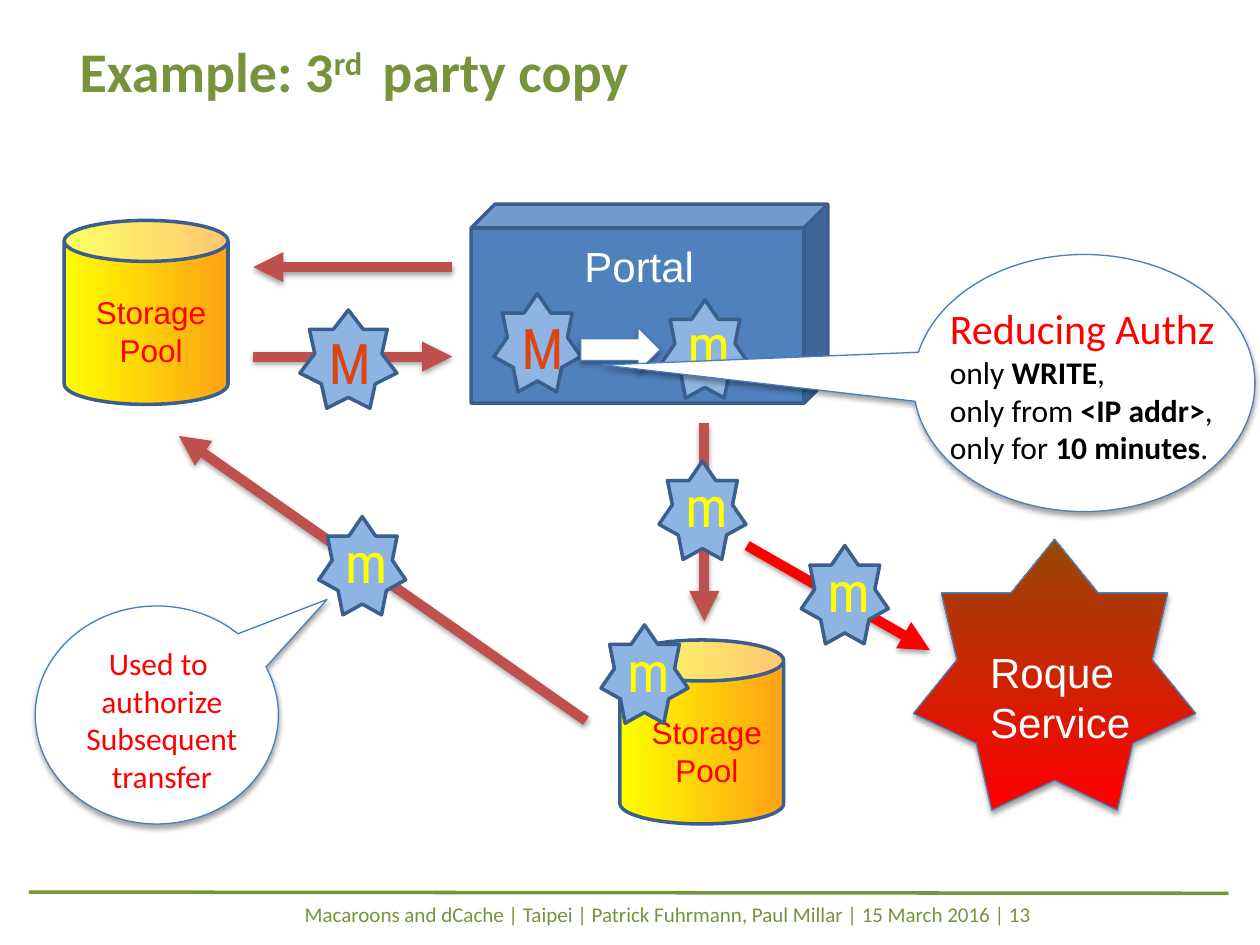
"""Build the slide on third-party copy with reduced macaroon rights."""
from lxml.etree import SubElement
from pptx import Presentation
from pptx.dml.color import RGBColor
from pptx.enum.shapes import MSO_CONNECTOR, MSO_SHAPE as SHAPE
from pptx.enum.text import MSO_ANCHOR, PP_ALIGN as ALIGN
from pptx.oxml.ns import qn
from pptx.util import Inches, Pt

rgb = RGBColor.from_string
GREEN, RED, YELLOW, WHITE = "77933C", "FF0000", "FFFF00", "FFFFFF"
BRICK, NAVY, BLUE = "C0504D", "3A5F8C", "4B7EBC"

prs = Presentation()
prs.slide_width, prs.slide_height = Inches(10), Inches(7.5)
slide = prs.slides.add_slide(prs.slide_layouts[5])
shapes = slide.shapes


def add_figure(kind, box, fill, line=NAVY, width=2, angle=0):
    figure = shapes.add_shape(kind, *map(Inches, box))
    figure.shadow.inherit = False
    if isinstance(fill, tuple):
        figure.fill.gradient()
        figure.fill.gradient_angle = angle
        for stop, color in zip(figure.fill.gradient_stops, fill):
            stop.color.rgb = rgb(color)
    else:
        figure.fill.solid()
        figure.fill.fore_color.rgb = rgb(fill)
    figure.line.color.rgb = rgb(line)
    figure.line.width = Pt(width)
    return figure


def add_label(box, lines, size, color, font="Calibri", align=ALIGN.LEFT):
    """Write one paragraph per line; parts between asterisks are bold."""
    frame = shapes.add_textbox(*map(Inches, box)).text_frame
    frame.word_wrap = True
    for i, line in enumerate(lines):
        paragraph = frame.add_paragraph() if i else frame.paragraphs[0]
        paragraph.alignment = align
        paragraph.font.size = Pt(size)
        paragraph.font.name = font
        paragraph.font.color.rgb = rgb(color)
        for j, part in enumerate(line.split("*")):
            run = paragraph.add_run()
            run.text = part
            if j % 2:
                run.font.bold = True
    return frame


title = shapes.title
title.left, title.top, title.width, title.height = map(Inches, (-0.3, 0.24, 6.22, 1.25))
title.text_frame.vertical_anchor = MSO_ANCHOR.TOP
heading = title.text_frame.paragraphs[0]
heading.alignment = ALIGN.CENTER
heading.font.size = Pt(32)
heading.font.name = "Calibri"
heading.font.bold = True
heading.font.color.rgb = rgb(GREEN)
for part in ("Example: 3", "rd ", " party copy"):
    run = heading.add_run()
    run.text = part
    if part == "rd ":
        run._r.get_or_add_rPr().set("baseline", "30000")

add_label((2.32, 7.11, 7.59, 0.3),
          ["Macaroons and dCache | Taipei | Patrick Fuhrmann, Paul Millar | 15 March 2016 | 13"],
          12, GREEN)

portal = add_figure(SHAPE.CUBE, (3.74, 1.62, 2.83, 1.58), "4F81BD")
portal.adjustments[0] = 0.12
add_label((4.54, 1.86, 2.07, 0.77), ["Portal"], 24, WHITE, "Arial")

for x, y in ((4.92, 5.08), (0.51, 1.75)):
    add_figure(SHAPE.CAN, (x, y, 1.3, 1.46), ("FFA214", YELLOW), angle=180)
    add_label((x + 0.06, y + 0.53, 1.26, 0.49), ["Storage", "Pool"], 18, RED, "Arial", ALIGN.CENTER)

rogue = add_figure(SHAPE.STAR_7_POINT, (7.25, 4.28, 2.24, 2.15), (RED, "984807"), BLUE, 0.75, 90)
add_label((7.76, 5.08, 1.56, 0.91), ["Roque", "Service"], 24, WHITE, "Arial")

shadowed = [(rogue, 1.8)]
for x1, y1, x2, y2, color, width in (
    (0.23, 7.08, 9.75, 7.09, GREEN, 2),
    (3.59, 2.12, 2.01, 2.12, BRICK, 5.75),
    (2.01, 2.83, 3.59, 2.83, BRICK, 5.75),
    (5.59, 3.36, 5.59, 4.93, BRICK, 5.75),
    (4.65, 5.72, 1.42, 3.46, BRICK, 5.75),
    (5.93, 4.33, 7.38, 5.16, RED, 5.75),
):
    line = shapes.add_connector(MSO_CONNECTOR.STRAIGHT, *map(Inches, (x1, y1, x2, y2)))
    line.line.color.rgb = rgb(color)
    line.line.width = Pt(width)
    properties = line._element.spPr
    if color != GREEN:
        SubElement(properties.find(qn("a:ln")), qn("a:tailEnd"), type="triangle")
        shadowed.append((line, 1.6))
    SubElement(properties, qn("a:effectLst"))

for x, y, size, letter, color, dx, dy in (
    (2.38, 2.46, 0.77, "M", "DC4512", 0.13, 0.1),
    (3.92, 2.33, 0.69, "M", "DC4512", 0.12, 0.11),
    (5.25, 2.38, 0.69, "m", YELLOW, 0.11, 0.03),
    (5.23, 3.66, 0.69, "m", YELLOW, 0.11, 0.03),
    (4.77, 4.96, 0.69, "m", YELLOW, 0.11, 0.04),
    (2.53, 4.1, 0.69, "m", YELLOW, 0.11, 0.04),
    (6.36, 4.33, 0.69, "m", YELLOW, 0.11, 0.04),
):
    add_figure(SHAPE.STAR_7_POINT, (x, y, size, 0.78), "8EB4E3")
    add_label((x + dx, y + dy, 0.52, 0.64), [letter], 32, color, "Roboto Condensed")

reduction = add_figure(SHAPE.RIGHT_ARROW, (4.61, 2.6, 0.63, 0.35), WHITE, BLUE, 0.75)
shadowed.append((reduction, 1.8))

for box, pointer in (
    ((7.25, 2.02, 2.71, 2.04), (-1.41, -0.07)),
    ((0.28, 4.81, 1.93, 1.73), (0.7, -0.53)),
):
    callout = add_figure(SHAPE.OVAL_CALLOUT, box, WHITE, BLUE, 0.75)
    callout.adjustments[0], callout.adjustments[1] = pointer
    shadowed.append((callout, 1.8))

limits = add_label((7.44, 2.35, 2.61, 1.72),
                   ["Reducing Authz", "only *WRITE*,", "only from *<IP addr>*,", "only for *10 minutes*."],
                   18, "000000")
limits.paragraphs[0].font.size = Pt(24)
limits.paragraphs[0].font.color.rgb = rgb(RED)
add_label((0.31, 5.06, 1.95, 1.62), ["Used to ", "authorize", "Subsequent", "transfer"],
          18, RED, align=ALIGN.CENTER)

for figure, distance in shadowed:
    shadow = SubElement(figure._element.spPr.find(qn("a:effectLst")), qn("a:outerShdw"),
                        blurRad=str(Pt(3.1)), dist=str(Pt(distance)), dir="5400000", rotWithShape="0")
    shade = SubElement(shadow, qn("a:srgbClr"), val="000000")
    SubElement(shade, qn("a:alpha"), val="36000")

prs.save("out.pptx")
